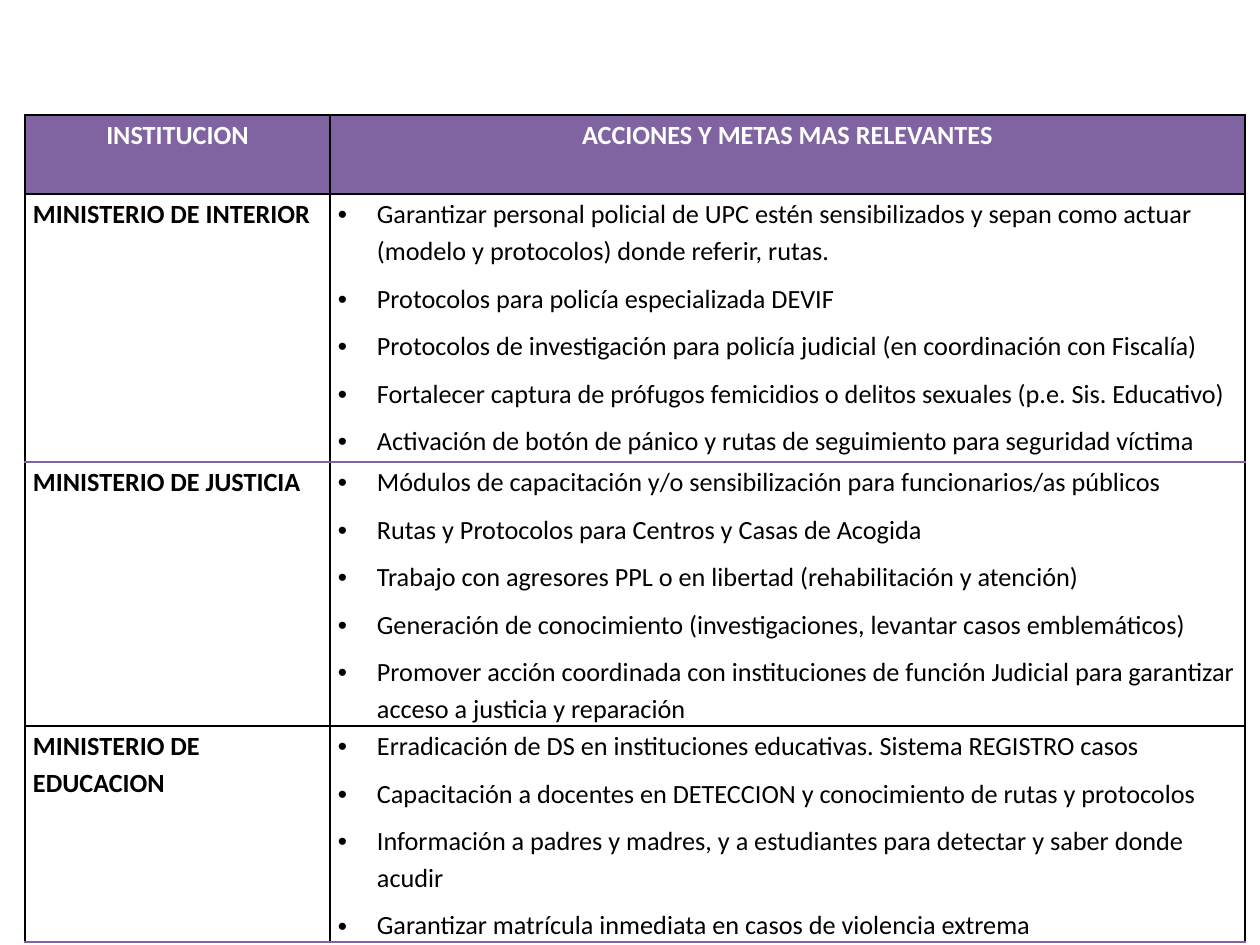
from dataclasses import dataclass

from lxml.etree import SubElement
from pptx import Presentation
from pptx.dml.color import RGBColor
from pptx.enum.text import PP_ALIGN
from pptx.oxml import parse_xml
from pptx.oxml.ns import nsdecls, qn
from pptx.util import Emu, Pt

SCALE = 914400 // 126


@dataclass(frozen=True)
class Theme:
    font: str = "Calibri"
    size: int = 15
    purple: str = "8064A2"
    black: str = "000000"
    white: str = "FFFFFF"
    line_spacing: float = 1.15
    space_after: int = 6


THEME = Theme()
HEADINGS = ("INSTITUCION", "ACCIONES Y METAS MAS RELEVANTES")
MINISTRIES = [
    ("MINISTERIO DE INTERIOR", [
        "Garantizar personal policial de UPC estén sensibilizados y sepan como actuar "
        "(modelo y protocolos) donde referir, rutas.",
        "Protocolos para policía especializada DEVIF",
        "Protocolos de investigación para policía judicial (en coordinación con Fiscalía)",
        "Fortalecer captura de prófugos femicidios o delitos sexuales (p.e. Sis. Educativo)",
        "Activación de botón de pánico y rutas de seguimiento para seguridad víctima",
    ]),
    ("MINISTERIO DE JUSTICIA", [
        "Módulos de capacitación y/o sensibilización para funcionarios/as públicos",
        "Rutas y Protocolos para Centros y Casas de Acogida",
        "Trabajo con agresores PPL o en libertad (rehabilitación y atención)",
        "Generación de conocimiento (investigaciones, levantar casos emblemáticos)",
        "Promover acción coordinada con instituciones de función Judicial para garantizar "
        "acceso a justicia y reparación",
    ]),
    ("MINISTERIO DE EDUCACION", [
        "Erradicación de DS en instituciones educativas. Sistema REGISTRO casos",
        "Capacitación a docentes en DETECCION y conocimiento de rutas y protocolos",
        "Información a padres y madres, y a estudiantes para detectar y saber donde acudir",
        "Garantizar matrícula inmediata en casos de violencia extrema",
    ]),
]
COLUMN_WIDTHS = (305, 915)
ROW_HEIGHTS = (79, 268, 260, 213)
ROW_EDGES = (THEME.black, THEME.black, THEME.purple, THEME.black, THEME.purple)


def px(length):
    return Emu(length * SCALE)


def set_borders(cell, top, bottom):
    sides = (("L", THEME.black), ("R", THEME.black), ("T", top), ("B", bottom))
    properties = cell._tc.get_or_add_tcPr()
    for index, (side, color) in enumerate(sides):
        properties.insert(index, parse_xml(
            f'<a:ln{side} {nsdecls("a")} w="{Pt(1)}"><a:solidFill>'
            f'<a:srgbClr val="{color}"/></a:solidFill></a:ln{side}>'))


def add_bullet(para):
    properties = para._p.get_or_add_pPr()
    properties.set("marL", str(px(39)))
    properties.set("indent", str(px(-39)))
    SubElement(properties, qn("a:buFont")).set("typeface", "Arial")
    SubElement(properties, qn("a:buChar")).set("char", "•")


def write_cell(cell, lines, color=THEME.black, bold=False, align=PP_ALIGN.LEFT, bullets=False):
    cell.margin_left = cell.margin_right = px(8)
    cell.margin_top = cell.margin_bottom = 0
    frame = cell.text_frame
    for index, line in enumerate(lines):
        para = frame.add_paragraph() if index else frame.paragraphs[0]
        para.text = line
        if bullets:
            add_bullet(para)
            para.space_after = Pt(THEME.space_after)
        para.alignment = align
        para.line_spacing = THEME.line_spacing
        para.font.name = THEME.font
        para.font.size = Pt(THEME.size)
        para.font.bold = bold
        para.font.color.rgb = RGBColor.from_string(color)


def add_actions_table(page, left, top):
    box = page.shapes.add_table(
        len(ROW_HEIGHTS), len(COLUMN_WIDTHS), px(left), px(top),
        px(sum(COLUMN_WIDTHS)), px(sum(ROW_HEIGHTS)))
    table = box.table
    table.horz_banding = False
    for column, width in zip(table.columns, COLUMN_WIDTHS):
        column.width = px(width)
    for row, height in zip(table.rows, ROW_HEIGHTS):
        row.height = px(height)

    for column, heading in enumerate(HEADINGS):
        cell = table.cell(0, column)
        write_cell(cell, [heading], THEME.white, True, PP_ALIGN.CENTER)
        cell.fill.solid()
        cell.fill.fore_color.rgb = RGBColor.from_string(THEME.purple)
    for row, (ministry, actions) in enumerate(MINISTRIES, 1):
        write_cell(table.cell(row, 0), [ministry], bold=True)
        write_cell(table.cell(row, 1), actions, bullets=True)
        for column in range(len(COLUMN_WIDTHS)):
            table.cell(row, column).fill.background()
    for row, edges in enumerate(zip(ROW_EDGES, ROW_EDGES[1:])):
        for column in range(len(COLUMN_WIDTHS)):
            set_borders(table.cell(row, column), *edges)


def main():
    deck = Presentation()
    deck.slide_width, deck.slide_height = px(1260), px(945)
    page = deck.slides.add_slide(deck.slide_layouts[6])
    add_actions_table(page, 25, 115)
    deck.save("out.pptx")


if __name__ == "__main__":
    main()
